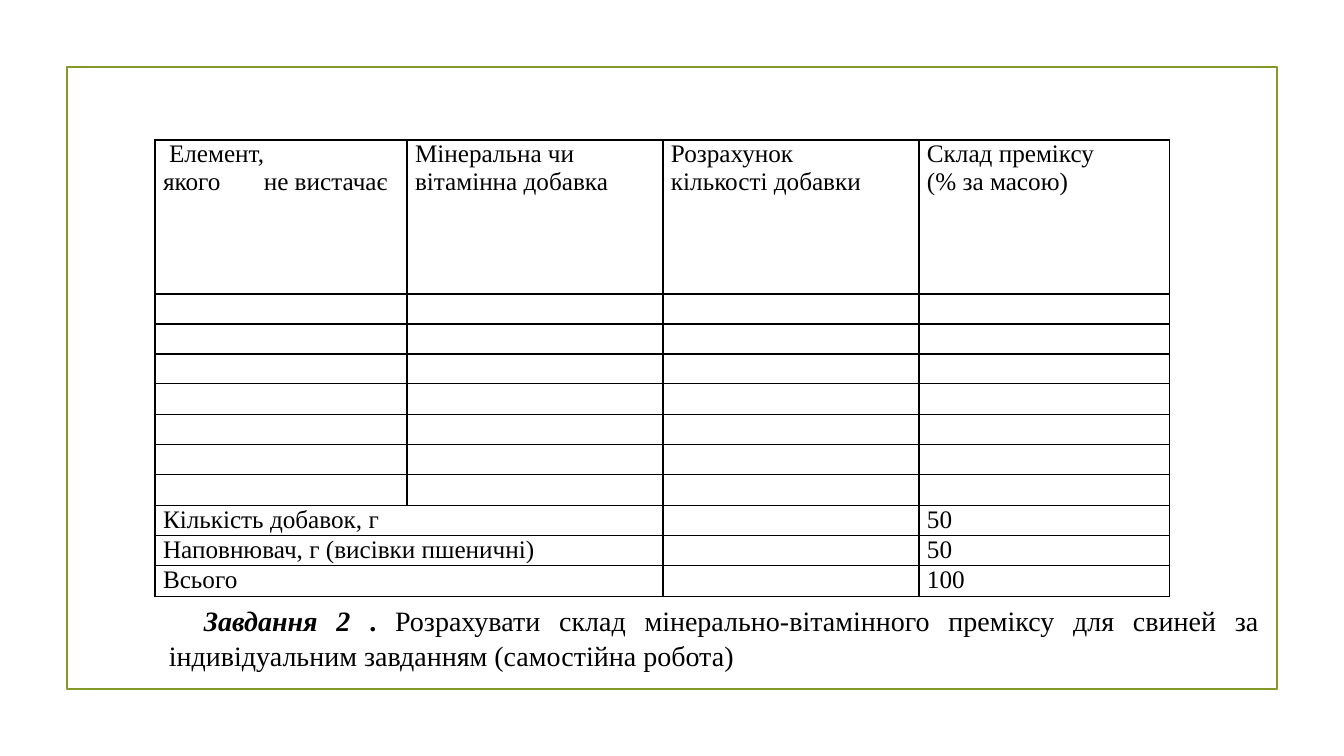
from lxml import etree
from pptx import Presentation
from pptx import util as u
from pptx.dml.color import RGBColor
from pptx.enum import shapes, text
from pptx.oxml.ns import qn

PX = 12192000 / 1344
THEME = {
    "frame": RGBColor.from_string("83992A"),
    "ink": RGBColor.from_string("000000"),
    "grid": "000000",
    "font": "Times New Roman",
    "table_size": 18,
    "task_size": 20,
}


def px(length):
    return u.Emu(round(length * PX))


def add_span(para, content, size, bold=False, italic=False):
    span = para.add_run()
    span.text = content
    span.font.name = THEME["font"]
    span.font.size = u.Pt(size)
    span.font.bold = bold
    span.font.italic = italic
    span.font.color.rgb = THEME["ink"]


deck = Presentation()
deck.slide_width, deck.slide_height = px(1344), px(756)
page = deck.slides.add_slide(deck.slide_layouts[6])

frame = page.shapes.add_shape(shapes.MSO_SHAPE.RECTANGLE, px(67), px(67), px(1210), px(622))
frame.shadow.inherit = False
frame.fill.background()
frame.line.color.rgb = THEME["frame"]
frame.line.width = u.Pt(1.25)

column_widths = [252, 256, 256, 251]
row_edges = [140] + [294 + 303 * step // 10 for step in range(11)]
cell_lines = {
    (0, 0): ["Елемент,", "якого\tне вистачає"],
    (0, 1): ["Мінеральна чи", "вітамінна добавка"],
    (0, 2): ["Розрахунок", "кількості добавки"],
    (0, 3): ["Склад преміксу", "(% за масою)"],
}
totals = [
    ("Кількість добавок, г", "50"),
    ("Наповнювач, г (висівки пшеничні)", "50"),
    ("Всього", "100"),
]
for row, (label, value) in enumerate(totals, start=8):
    cell_lines[row, 0] = [label]
    cell_lines[row, 3] = [value]

table = page.shapes.add_table(
    11, 4, px(155), px(140), px(sum(column_widths)), px(row_edges[-1] - row_edges[0])
).table
table.first_row = False
table.horz_banding = False
for column, width in zip(table.columns, column_widths):
    column.width = px(width)
for row, top, bottom in zip(table.rows, row_edges, row_edges[1:]):
    row.height = px(bottom - top)

for row in range(11):
    for column in range(4):
        cell = table.cell(row, column)
        cell.margin_left = cell.margin_right = cell.margin_top = cell.margin_bottom = 0
        properties = cell._tc.get_or_add_tcPr()
        for side in ("a:lnL", "a:lnR", "a:lnT", "a:lnB"):
            border = etree.SubElement(properties, qn(side), w=str(u.Pt(1)))
            fill = etree.SubElement(border, qn("a:solidFill"))
            etree.SubElement(fill, qn("a:srgbClr"), val=THEME["grid"])
        cell.fill.background()

        lines = cell_lines.get((row, column), [])
        if not lines:
            ending = cell.text_frame.paragraphs[0]._p.get_or_add_endParaRPr()
            ending.set("sz", str(THEME["table_size"] * 100 - 200))
        for index, line in enumerate(lines):
            para = cell.text_frame.paragraphs[0] if index == 0 else cell.text_frame.add_paragraph()
            indent = 14 if line == "Елемент," else 8
            layout = para._p.get_or_add_pPr()
            layout.set("marL", str(px(indent)))
            layout.set("indent", "0")
            if "\t" in line:
                tabs = etree.SubElement(layout, qn("a:tabLst"))
                etree.SubElement(tabs, qn("a:tab"), pos=str(px(84)), algn="l")
            add_span(para, line, THEME["table_size"])

for row in range(8, 11):
    table.cell(row, 0).merge(table.cell(row, 1))

task = page.shapes.add_textbox(px(123), px(597), px(1146), px(78))
task.text_frame.word_wrap = True
para = task.text_frame.paragraphs[0]
para.alignment = text.PP_ALIGN.JUSTIFY
para.line_spacing = 1.05
layout = para._p.get_or_add_pPr()
layout.set("marL", str(px(36)))
layout.set("indent", str(px(35)))
add_span(para, "Завдання 2 ", THEME["task_size"], bold=True, italic=True)
add_span(para, ". ", THEME["task_size"], bold=True)
add_span(
    para,
    "Розрахувати склад мінерально-вітамінного преміксу для свиней "
    "за індивідуальним завданням (самостійна робота)",
    THEME["task_size"],
)

deck.save("out.pptx")
